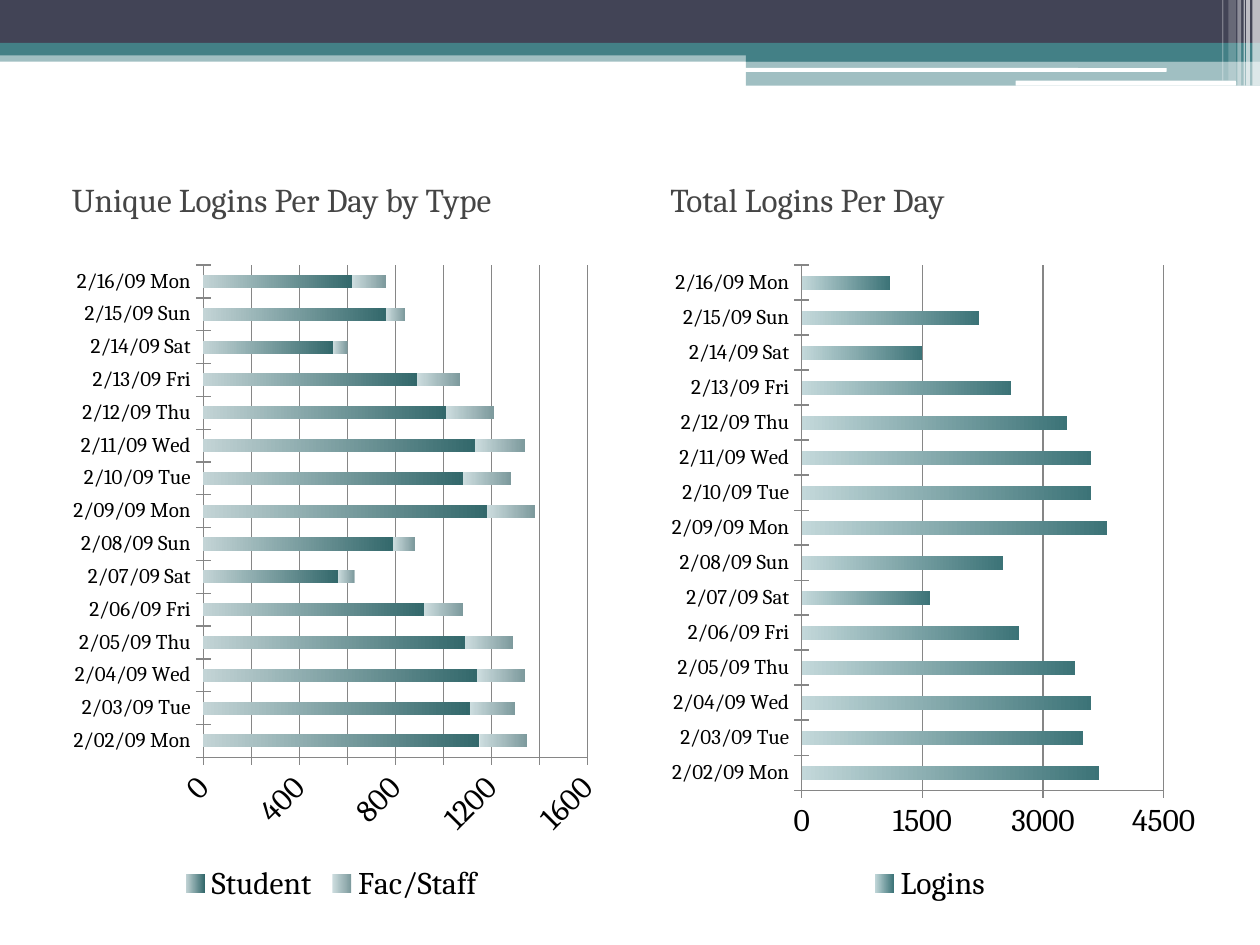
from lxml.etree import SubElement
from pptx import Presentation
from pptx.chart.data import CategoryChartData
from pptx.dml.color import RGBColor
from pptx.enum.chart import XL_CHART_TYPE, XL_LEGEND_POSITION, XL_TICK_MARK
from pptx.enum.shapes import MSO_SHAPE
from pptx.enum.text import MSO_ANCHOR
from pptx.oxml.ns import qn
from pptx.util import Inches, Pt

FONT = "Cambria"
NAVY = RGBColor(0x42, 0x44, 0x56)
TEAL = RGBColor(0x43, 0x80, 0x86)
WHITE = RGBColor(0xFF, 0xFF, 0xFF)
BLACK = RGBColor(0, 0, 0)
HEADING = RGBColor(0x45, 0x45, 0x45)
GRID = RGBColor(0x86, 0x86, 0x86)
STUDENT = (RGBColor(0xC3, 0xD4, 0xD6), RGBColor(0x33, 0x68, 0x6B))
STAFF = (RGBColor(0xCD, 0xDD, 0xDF), RGBColor(0x7D, 0x9A, 0x9D))
LOGINS = (RGBColor(0xC3, 0xD8, 0xDA), RGBColor(0x3C, 0x73, 0x77))

# left, top, width, height, colour, opacity in percent
BANDS = [
    (0, 0.4, 10, 0.09, TEAL, 50),
    (0, 0, 10, 0.34, NAVY, 100),
    (0, 0.34, 10, 0.1, TEAL, 100),
    (5.92, 0.39, 4.08, 0.1, TEAL, 100),
    (5.92, 0.48, 4.08, 0.2, TEAL, 50),
]
ROUNDED_BARS = [(5.91, 0.54, 3.35, 0.03, WHITE, 100),
                (8.06, 0.64, 1.75, 0.04, WHITE, 100)]
STRIPES = [  # left, width, height, opacity
    (9.94, 0.06, 0.68, 65), (9.89, 0.03, 0.68, 65), (9.87, 0.01, 0.68, 60),
    (9.82, 0.03, 0.68, 40), (9.75, 0.06, 0.64, 20), (9.7, 0.01, 0.64, 30),
]

WEEKDAYS = ["Mon", "Tue", "Wed", "Thu", "Fri", "Sat", "Sun"]
FIRST_DAY, LAST_DAY = 2, 16
DAYS = [f"2/{day:02d}/09 {WEEKDAYS[(day - FIRST_DAY) % 7]}"
        for day in range(FIRST_DAY, LAST_DAY + 1)]

PANELS = [
    dict(heading="Unique Logins Per Day by Type", left=0.42, top_value=1600, step=200,
         label_angle=-45, plot=(0.27, 0.02, 0.69, 0.75),
         series=[
             ("Student", STUDENT, [1150, 1110, 1140, 1090, 920, 560, 790, 1180,
                                   1080, 1130, 1010, 890, 540, 760, 620]),
             ("Fac/Staff", STAFF, [200, 190, 200, 200, 160, 70, 90, 200,
                                   200, 210, 200, 180, 60, 80, 140])]),
    dict(heading="Total Logins Per Day", left=5.17, top_value=4500, step=1500,
         label_angle=0, plot=(0.27, 0.02, 0.65, 0.8),
         series=[
             ("Logins", LOGINS, [3700, 3500, 3600, 3400, 2700, 1600, 2500, 3800,
                                 3600, 3600, 3300, 2600, 1500, 2200, 1100])]),
]
PANEL_WIDTH = 4.42


def add_band(slide, left, top, width, height, color, opacity, kind=MSO_SHAPE.RECTANGLE):
    sp = slide.shapes.add_shape(kind, *map(Inches, (left, top, width, height)))
    sp.shadow.inherit = False
    sp.fill.solid()
    sp.fill.fore_color.rgb = color
    sp.line.fill.background()
    if opacity < 100:
        clr = sp.fill._xPr.find(qn("a:solidFill"))[0]
        SubElement(clr, qn("a:alpha"), val=str(opacity * 1000))


def format_heading(sp, text, left):
    sp.left, sp.top = Inches(left), Inches(1.33)
    sp.width, sp.height = Inches(PANEL_WIDTH), Inches(0.5)
    tf = sp.text_frame
    tf.text = text
    tf.vertical_anchor = MSO_ANCHOR.MIDDLE
    p = tf.paragraphs[0]
    p.space_before = Pt(3)
    pPr = p._p.get_or_add_pPr()
    pPr.set("marL", str(Inches(0.05)))
    pPr.set("indent", "0")
    font = p.runs[0].font
    font.name, font.size, font.bold = FONT, Pt(19), False
    font.color.rgb = HEADING


def set_plot_layout(chart, bounds):
    """Fix the inner plot area, given as fractions of the chart."""
    plot_area = chart._chartSpace.chart.plotArea
    layout = plot_area.find(qn("c:layout"))
    if layout is None:
        layout = SubElement(plot_area, qn("c:layout"))
        plot_area.insert(0, layout)
    manual = SubElement(layout, qn("c:manualLayout"))
    settings = [("layoutTarget", "inner"), ("xMode", "edge"), ("yMode", "edge"),
                *zip("xywh", bounds)]
    for tag, value in settings:
        SubElement(manual, qn(f"c:{tag}"), val=str(value))


def add_login_chart(slide, panel):
    data = CategoryChartData()
    data.categories = DAYS
    for name, _, values in panel["series"]:
        data.add_series(name, values)
    frame = slide.shapes.add_chart(
        XL_CHART_TYPE.BAR_STACKED, Inches(panel["left"]), Inches(2),
        Inches(PANEL_WIDTH), Inches(5.21), data)
    chart = frame.chart
    chart.has_title = False
    chart.font.name, chart.font.size = FONT, Pt(18)
    chart.font.color.rgb = BLACK
    chart.has_legend = True
    chart.legend.position = XL_LEGEND_POSITION.BOTTOM
    chart.legend.include_in_layout = False

    plot = chart.plots[0]
    plot.gap_width, plot.overlap = 150, 100
    plot.vary_by_categories = False
    for series, (_, colors, _) in zip(plot.series, panel["series"]):
        fill = series.format.fill
        fill.gradient()
        fill.gradient_angle = 0
        for stop, color, position in zip(fill.gradient_stops, colors, (0, 1)):
            stop.color.rgb = color
            stop.position = position

    days, logins = chart.category_axis, chart.value_axis
    days.tick_labels.font.size = Pt(12)
    logins.minimum_scale, logins.maximum_scale = 0, panel["top_value"]
    logins.major_unit = panel["step"]
    logins.has_major_gridlines = True
    logins.tick_labels.font.size = Pt(18)
    body = logins._element.find(qn("c:txPr")).find(qn("a:bodyPr"))
    body.set("rot", str(panel["label_angle"] * 60000))
    for axis in (days, logins):
        axis.major_tick_mark = XL_TICK_MARK.CROSS
    for line in (days.format.line, logins.format.line, logins.major_gridlines.format.line):
        line.color.rgb = GRID
        line.width = Pt(0.75)
    set_plot_layout(chart, panel["plot"])


def main():
    prs = Presentation()
    prs.slide_width, prs.slide_height = Inches(10), Inches(7.5)
    s = prs.slides.add_slide(prs.slide_layouts.get_by_name("Comparison"))
    for band in BANDS:
        add_band(s, *band)
    for bar in ROUNDED_BARS:
        add_band(s, *bar, kind=MSO_SHAPE.ROUNDED_RECTANGLE)
    for left, width, height, opacity in STRIPES:
        add_band(s, left, 0, width, height, WHITE, opacity)

    headings = {1: PANELS[0], 3: PANELS[1]}  # placeholder index to panel
    for sp in list(s.placeholders):
        panel = headings.get(sp.placeholder_format.idx)
        if panel:
            format_heading(sp, panel["heading"], panel["left"])
        else:
            sp._element.getparent().remove(sp._element)
    for panel in PANELS:
        add_login_chart(s, panel)
    prs.save("out.pptx")


if __name__ == "__main__":
    main()
